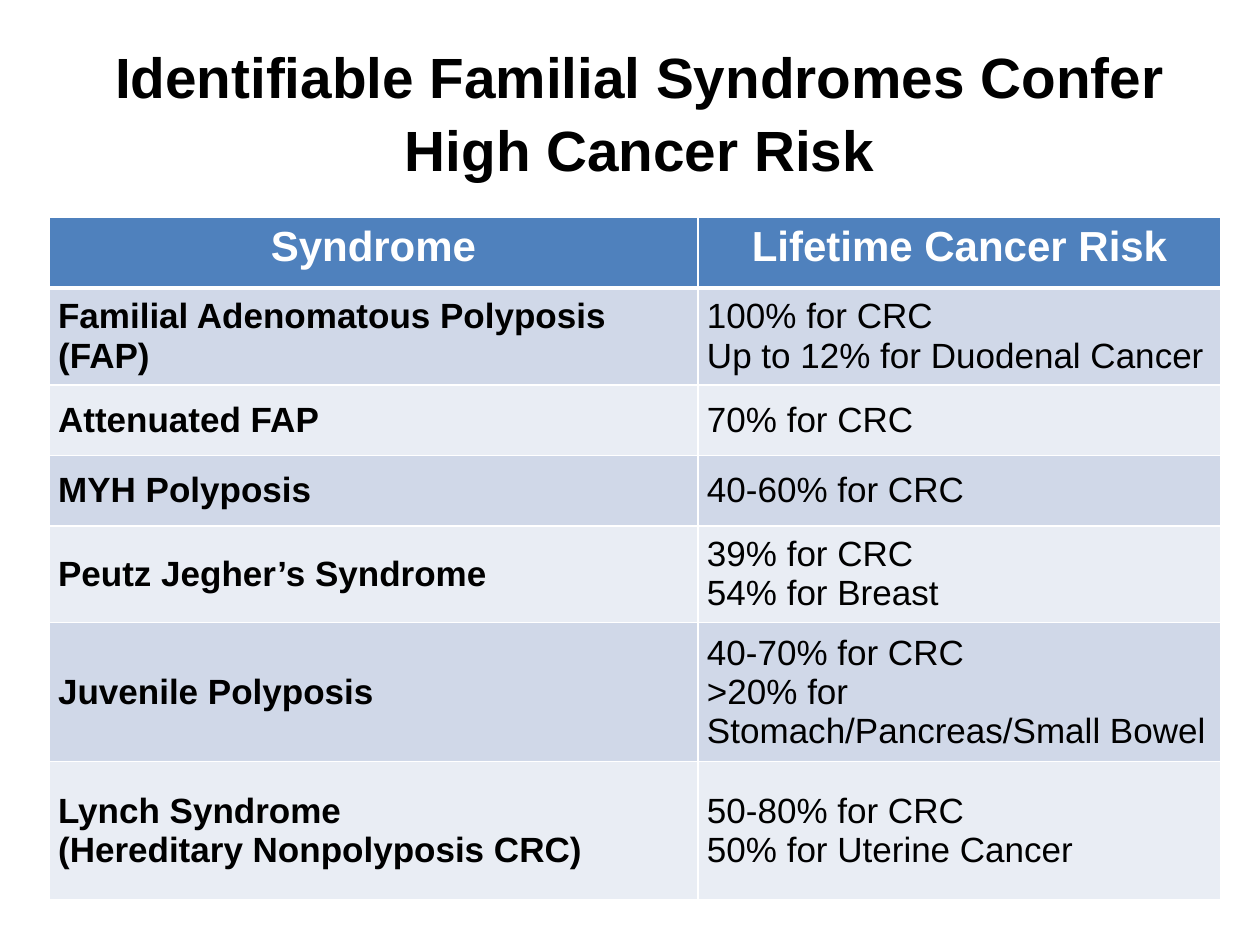
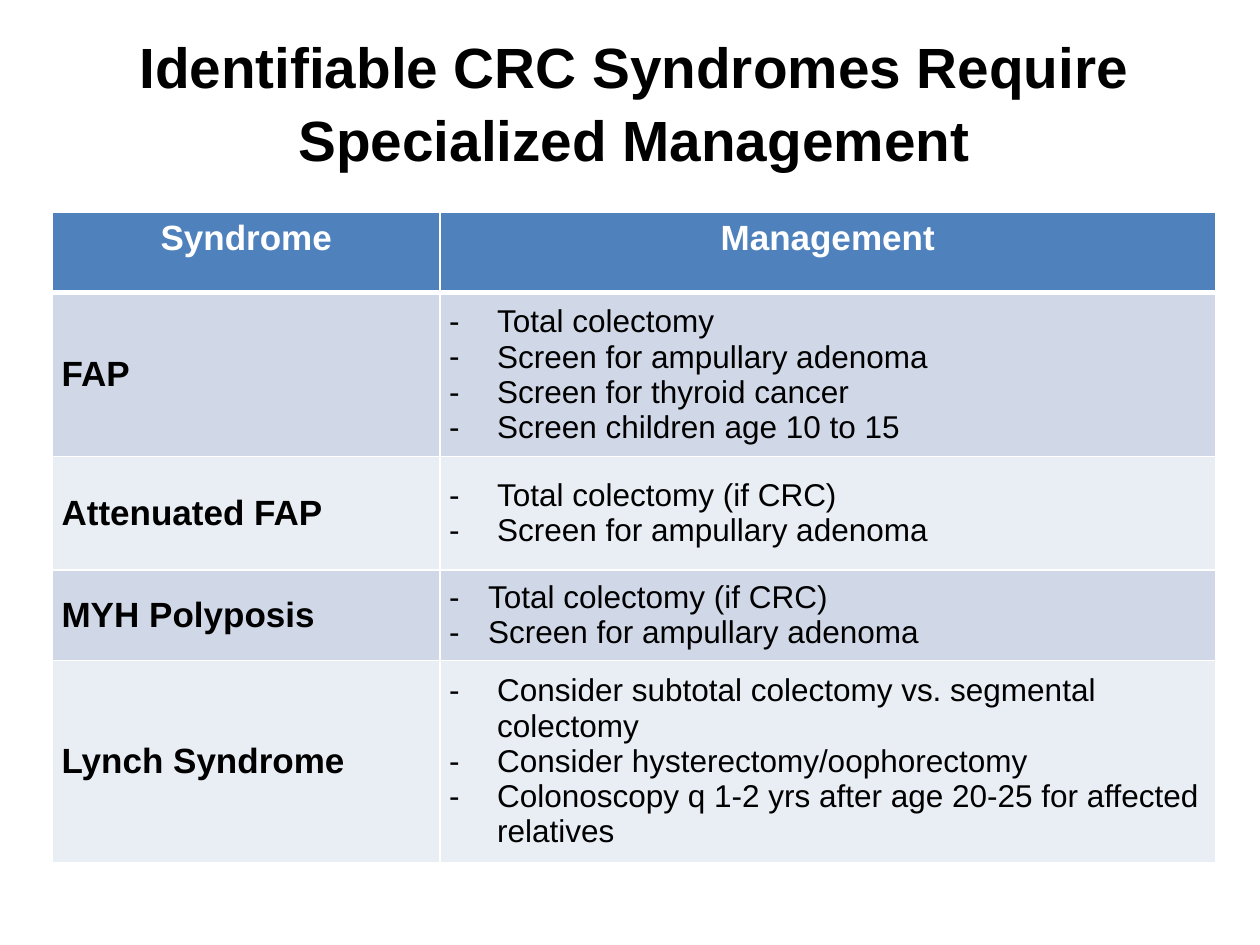
from lxml.etree import SubElement
from pptx import Presentation
from pptx.dml.color import RGBColor
from pptx.enum.text import MSO_ANCHOR, PP_ALIGN
from pptx.oxml.ns import qn
from pptx.util import Pt

BLACK = RGBColor(0x00, 0x00, 0x00)
WHITE = RGBColor(0xFF, 0xFF, 0xFF)
BLUE = RGBColor(0x4F, 0x81, 0xBD)
BANDS = RGBColor(0xD0, 0xD8, 0xE8), RGBColor(0xE9, 0xED, 0xF4)

# Syndrome, lifetime risk, row height
RISKS = [
    ("Familial Adenomatous Polyposis (FAP)",
     "100% for CRC\nUp to 12% for Duodenal Cancer", 55.4),
    ("Attenuated FAP", "70% for CRC", 40.3),
    ("MYH Polyposis", "40-60% for CRC", 40.3),
    ("Peutz Jegher’s Syndrome", "39% for CRC\n54% for Breast", 55.4),
    ("Juvenile Polyposis",
     "40-70% for CRC\n>20% for Stomach/Pancreas/Small Bowel", 79.2),
    ("Lynch Syndrome\n(Hereditary Nonpolyposis CRC)",
     "50-80% for CRC\n50% for Uterine Cancer", 79.2),
]

# Syndrome, management, row height, dash indent
CARE = [
    ("FAP", "Total colectomy\nScreen for ampullary adenoma\n"
     "Screen for thyroid cancer\nScreen children age 10 to 15", 89.3, 27.4),
    ("Attenuated FAP",
     "Total colectomy (if CRC)\nScreen for ampullary adenoma", 64.8, 27.4),
    ("MYH Polyposis",
     "Total colectomy (if CRC)\nScreen for ampullary adenoma", 51.8, 22.3),
    ("Lynch Syndrome",
     "Consider subtotal colectomy vs. segmental colectomy\n"
     "Consider hysterectomy/oophorectomy\n"
     "Colonoscopy q 1-2 yrs after age 20-25 for affected relatives",
     107.4, 27.4),
]


class Deck:
    face = "Arial"

    def __init__(self):
        self.file = Presentation()
        self.file.slide_width, self.file.slide_height = Pt(720), Pt(540)

    def add(self):
        self.slide = self.file.slides.add_slide(self.file.slide_layouts[6])

    def style(self, para, size, color, bold):
        font = para.font
        font.name, font.size, font.bold = self.face, Pt(size), bold
        font.color.rgb = color

    def title(self, text, left, top, width):
        box = self.slide.shapes.add_textbox(Pt(left), Pt(top), Pt(width), Pt(90))
        frame = box.text_frame
        frame.word_wrap = True
        frame.vertical_anchor = MSO_ANCHOR.MIDDLE
        frame.text = text
        para = frame.paragraphs[0]
        para.alignment = PP_ALIGN.CENTER
        para.line_spacing = 1.07
        self.style(para, 32.4, BLACK, True)

    def edge(self, cell):
        """Draw white borders, heavier below."""
        props = cell._tc.get_or_add_tcPr()
        for side, width in zip("LRTB", (1, 1, 1, 3)):
            line = SubElement(props, qn(f"a:ln{side}"), w=str(Pt(width)))
            fill = SubElement(line, qn("a:solidFill"))
            SubElement(fill, qn("a:srgbClr"), val=str(WHITE))

    def dash(self, para, indent):
        props = para._p.get_or_add_pPr()
        props.set("marL", str(Pt(indent)))
        props.set("indent", str(-Pt(indent)))
        SubElement(props, qn("a:buFont"), typeface=self.face)
        SubElement(props, qn("a:buChar"), char="-")

    def cell(self, cell, text, size, fill, bold=False, head=False, indent=0):
        cell.margin_left = cell.margin_right = Pt(5.2)
        cell.margin_top = cell.margin_bottom = Pt(3.6)
        cell.vertical_anchor = MSO_ANCHOR.TOP if head else MSO_ANCHOR.MIDDLE
        if head:
            self.edge(cell)
        cell.fill.solid()
        cell.fill.fore_color.rgb = fill
        cell.text_frame.text = text
        for para in cell.text_frame.paragraphs:
            if indent:
                self.dash(para, indent)
            para.alignment = PP_ALIGN.CENTER if head else PP_ALIGN.LEFT
            self.style(para, size, WHITE if head else BLACK, bold)

    def table(self, left, top, widths, heads, high, rows, size, note):
        tall = high + sum(row[2] for row in rows)
        grid = self.slide.shapes.add_table(
            len(rows) + 1, 2, Pt(left), Pt(top), Pt(sum(widths)), Pt(tall)).table
        for col, width in zip(grid.columns, widths):
            col.width = Pt(width)
        # Header row
        grid.rows[0].height = Pt(high)
        for col, text in enumerate(heads):
            self.cell(grid.cell(0, col), text, size, BLUE, True, True)
        # Banded body
        for at, (name, text, height, *indent) in enumerate(rows, 1):
            band = BANDS[(at - 1) % 2]
            grid.rows[at].height = Pt(height)
            self.cell(grid.cell(at, 0), name, 20, band, True)
            self.cell(grid.cell(at, 1), text, note, band, indent=sum(indent))


def main():
    deck = Deck()

    # Cancer risk
    deck.add()
    deck.title("Identifiable Familial Syndromes Confer High Cancer Risk",
               51, 18, 629)
    deck.table(28, 124.2, (370.8, 299), ("Syndrome", "Lifetime Cancer Risk"),
               40.3, RISKS, 24, 20)

    # Management
    deck.add()
    deck.title("Identifiable CRC Syndromes Require Specialized Management",
               30, 12.2, 664.6)
    deck.table(30, 121.2, (221.5, 443), ("Syndrome", "Management"),
               46.1, CARE, 20, 18)

    deck.file.save("out.pptx")


if __name__ == "__main__":
    main()
